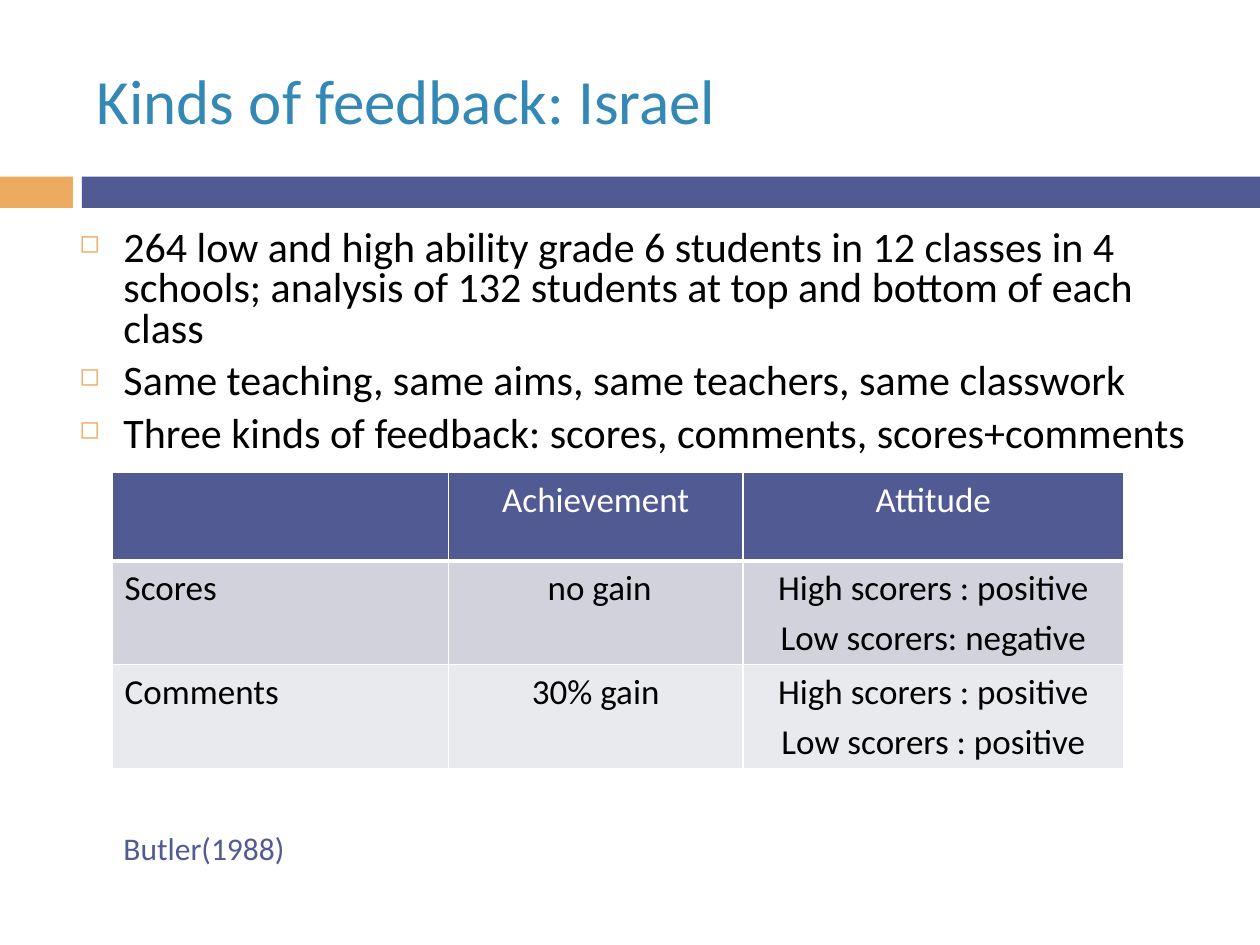
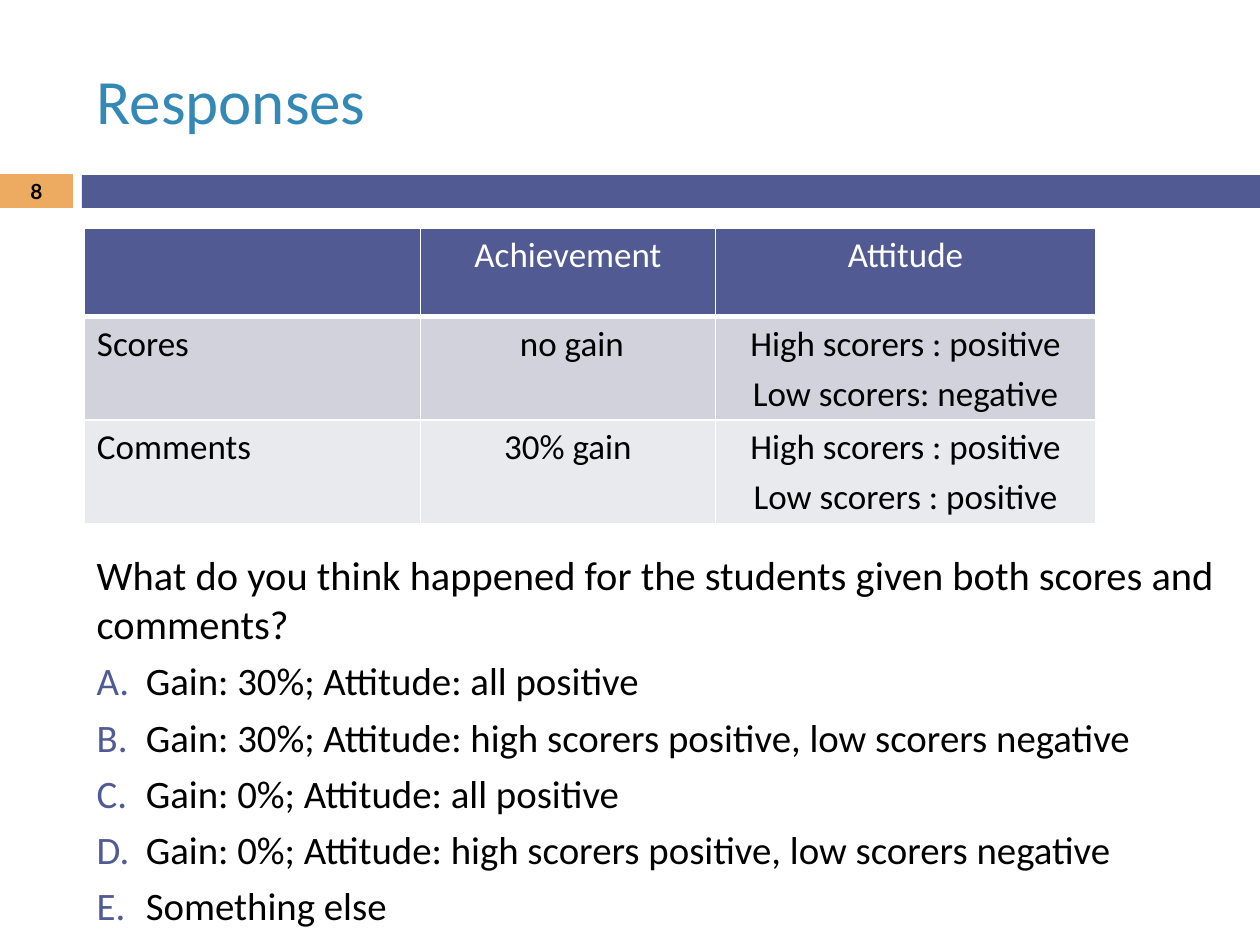
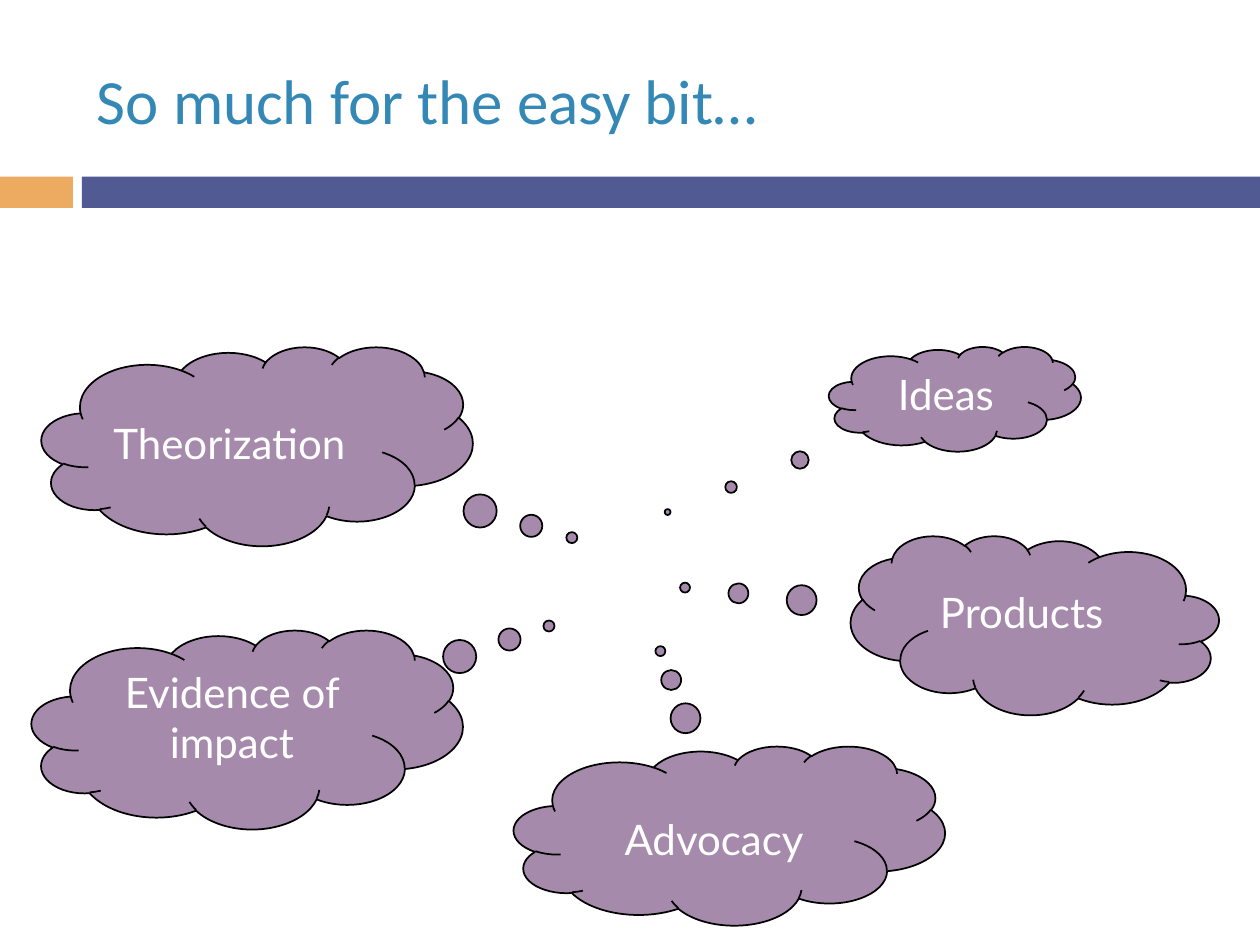
import dataclasses

import lxml.etree
import pptx
import pptx.dml.color
import pptx.enum.shapes
import pptx.enum.text
import pptx.oxml.ns
import pptx.util

Cm = pptx.util.Cm
Pt = pptx.util.Pt
qn = pptx.oxml.ns.qn
SHAPE = pptx.enum.shapes.MSO_SHAPE
LEFT = pptx.enum.text.PP_ALIGN.LEFT
CENTER = pptx.enum.text.PP_ALIGN.CENTER
TOP = pptx.enum.text.MSO_ANCHOR.TOP
MIDDLE = pptx.enum.text.MSO_ANCHOR.MIDDLE


@dataclasses.dataclass(frozen=True)
class Theme:
    """Colours, fonts and type sizes shared by the slides."""
    title: str = "3488B6"
    purple: str = "525A93"
    orange: str = "EDAA61"
    cloud: str = "A68AAC"
    black: str = "000000"
    white: str = "FFFFFF"
    rows: tuple = ("525A93", "D1D2DC", "E9EAEE")
    font: str = "Calibri"
    shape_font: str = "Lato"
    title_size: float = 36
    body_size: float = 24
    question_size: float = 23.1
    option_size: float = 22.2
    table_size: float = 20
    source_size: float = 18
    number_size: float = 11.9


THEME = Theme()
RESULTS = [
    ["", "Achievement", "Attitude"],
    ["Scores", " no gain", "High scorers : positive\nLow scorers: negative"],
    ["Comments", "30% gain", "High scorers : positive\nLow scorers : positive"],
]


def rgb(color):
    """Turn a hex string into a colour."""
    return pptx.dml.color.RGBColor.from_string(color)


def add_run(p, text, size, color, font=THEME.font, bold=False):
    """Add one formatted run to a paragraph."""
    r = p.add_run()
    r.text = text
    r.font.size = Pt(size)
    r.font.name = font
    r.font.bold = bold
    r.font.color.rgb = rgb(color)


def next_paragraph(tf, space):
    """Return the empty first paragraph, or a new one with space before."""
    if not tf.paragraphs[0].runs:
        return tf.paragraphs[0]
    p = tf.add_paragraph()
    p.space_before = Pt(space)
    return p


def set_bullet(p, indent, color, kind, **attrs):
    """Give a paragraph a hanging indent and a coloured bullet."""
    pPr = p._p.get_or_add_pPr()
    pPr.set("marL", str(Cm(indent)))
    pPr.set("indent", str(-Cm(indent)))
    clr = lxml.etree.SubElement(pPr, qn("a:buClr"))
    lxml.etree.SubElement(clr, qn("a:srgbClr"), val=color)
    if kind == "a:buChar":
        lxml.etree.SubElement(pPr, qn("a:buSzPct"), val="60000")
    lxml.etree.SubElement(pPr, qn(kind), **attrs)


def add_text(s, box, anchor=TOP, wrap=True):
    """Add a text box and return its text frame."""
    tf = s.shapes.add_textbox(*map(Cm, box)).text_frame
    tf.word_wrap = wrap
    tf.vertical_anchor = anchor
    return tf


def add_filled(s, kind, box, fill):
    """Add a flat preset shape without an outline."""
    sp = s.shapes.add_shape(kind, *map(Cm, box))
    sp.shadow.inherit = False
    sp.fill.solid()
    sp.fill.fore_color.rgb = rgb(fill)
    sp.line.fill.background()
    return sp


def add_slide(prs, title, purple_top=3.56, orange_top=3.56, number=None):
    """Add a slide with its title, bands and optional number."""
    s = prs.slides.add_slide(prs.slide_layouts[6])
    bottom = 4.19
    add_filled(s, SHAPE.RECTANGLE, (1.65, purple_top, 23.75, bottom - purple_top),
               THEME.purple)
    sp = add_filled(s, SHAPE.RECTANGLE, (0, orange_top, 1.47, bottom - orange_top),
                    THEME.orange)
    if number:
        tf = sp.text_frame
        tf.margin_top = tf.margin_bottom = 0
        tf.vertical_anchor = MIDDLE
        p = tf.paragraphs[0]
        p.alignment = CENTER
        add_run(p, number, THEME.number_size, THEME.black, THEME.shape_font, True)
    tf = add_text(s, (1.7, 0.64, 22.66, 2.74), MIDDLE)
    add_run(tf.paragraphs[0], title, THEME.title_size, THEME.title)
    return s


def add_bullets(s, box, items):
    """Add a tightly spaced list with square bullets."""
    tf = add_text(s, box)
    for item in items:
        p = next_paragraph(tf, 7)
        p.line_spacing = 0.8
        set_bullet(p, 0.89, THEME.orange, "a:buChar", char="◻")
        add_run(p, item, THEME.body_size, THEME.black)


def add_question(s, box, question, options):
    """Add a question followed by lettered options."""
    tf = add_text(s, box)
    add_run(tf.paragraphs[0], question, THEME.question_size, THEME.black)
    for option in options:
        p = next_paragraph(tf, 5.5)
        set_bullet(p, 0.99, THEME.purple, "a:buAutoNum", type="alphaUcPeriod")
        add_run(p, option, THEME.option_size, THEME.black)


def set_borders(cell, bottom):
    """Draw white borders round a table cell."""
    tcPr = cell._tc.get_or_add_tcPr()
    widths = {"a:lnL": 1, "a:lnR": 1, "a:lnT": 1, "a:lnB": bottom}
    for i, (tag, width) in enumerate(widths.items()):
        ln = lxml.etree.Element(qn(tag), w=str(Pt(width)))
        fill = lxml.etree.SubElement(ln, qn("a:solidFill"))
        lxml.etree.SubElement(fill, qn("a:srgbClr"), val=THEME.white)
        tcPr.insert(i, ln)


def add_results(s, left, top):
    """Add the table of feedback results."""
    widths, heights = (6.78, 5.94, 7.67), (1.78, 2.08, 2.08)
    table = s.shapes.add_table(len(heights), len(widths), Cm(left), Cm(top),
                               Cm(sum(widths)), Cm(sum(heights))).table
    for column, width in zip(table.columns, widths):
        column.width = Cm(width)
    for i, (texts, height) in enumerate(zip(RESULTS, heights)):
        table.rows[i].height = Cm(height)
        for j, text in enumerate(texts):
            cell = table.cell(i, j)
            cell.fill.solid()
            cell.fill.fore_color.rgb = rgb(THEME.rows[i])
            set_borders(cell, 1 if i else 3)
            for line in text.splitlines():
                p = next_paragraph(cell.text_frame, 4)
                p.alignment = CENTER if j else LEFT
                add_run(p, line, THEME.table_size, THEME.black if i else THEME.white)


def add_cloud(s, text, box, tail, inset=0.13, align=CENTER, flip=False):
    """Add a thought cloud whose bubbles lead to the tail point."""
    sp = add_filled(s, SHAPE.CLOUD_CALLOUT, box, THEME.cloud)
    sp.line.color.rgb = rgb(THEME.black)
    sp.line.width = Pt(1)
    sp.adjustments[0], sp.adjustments[1] = tail
    if flip:
        sp._element.spPr.find(qn("a:xfrm")).set("flipH", "1")
    tf = sp.text_frame
    tf.word_wrap = True
    tf.vertical_anchor = TOP
    tf.margin_top = Cm(inset)
    p = tf.paragraphs[0]
    p.alignment = align
    add_run(p, text, THEME.body_size, THEME.white, THEME.shape_font)


def main():
    """Build the three slides and save them."""
    prs = pptx.Presentation()
    prs.slide_width, prs.slide_height = Cm(25.4), Cm(19.05)

    s = add_slide(prs, "Kinds of feedback: Israel")
    add_bullets(s, (1.35, 4.52, 23.22, 3.86), [
        "264 low and high ability grade 6 students in 12 classes in 4 schools; "
        "analysis of 132 students at top and bottom of each class",
        "Same teaching, same aims, same teachers, same classwork",
        "Three kinds of feedback: scores, comments, scores+comments",
    ])
    tf = add_text(s, (2.24, 16.59, 3.78, 1.02), wrap=False)
    add_run(tf.paragraphs[0], "Butler(1988)", THEME.source_size, THEME.purple)
    add_results(s, 2.26, 9.53)

    s = add_slide(prs, "Responses", 3.53, 3.51, "8")
    add_question(
        s, (1.7, 10.97, 23.7, 7.24),
        "What do you think happened for the students given both scores and comments?",
        [
            "Gain: 30%; Attitude: all positive",
            "Gain: 30%; Attitude: high scorers positive, low scorers negative",
            "Gain: 0%; Attitude: all positive",
            "Gain: 0%; Attitude: high scorers positive, low scorers negative",
            "Something else",
        ])
    add_results(s, 1.7, 4.6)

    s = add_slide(prs, "So much for the easy bit…")
    add_cloud(s, "Theorization", (0.84, 6.99, 8.69, 4.01), (0.73, 0.46), 0.82, LEFT)
    add_cloud(s, "Advocacy", (10.36, 15.04, 8.69, 3.61), (-0.16, -1.03), 0.82)
    add_cloud(s, "Products", (17.15, 10.8, 7.42, 3.61), (0.95, -0.21), 0.47, LEFT, True)
    add_cloud(s, "Evidence of impact", (0.64, 12.7, 8.69, 4.01), (0.7, -0.52))
    add_cloud(s, "Ideas", (16.71, 6.99, 5.08, 2.11), (-1.14, 1.08))

    prs.save("out.pptx")


if __name__ == "__main__":
    main()
